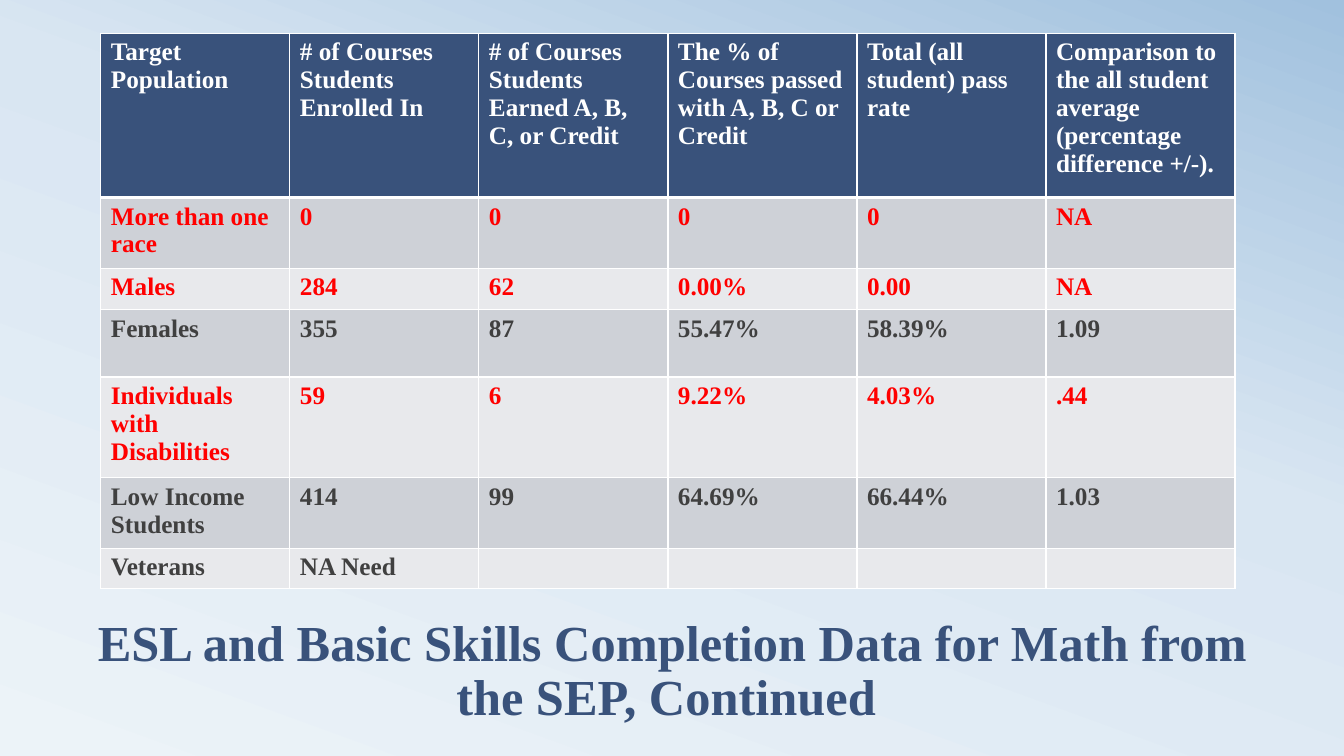
from copy import deepcopy

from lxml.etree import SubElement
from pptx import Presentation
from pptx.dml.color import RGBColor
from pptx.enum.text import MSO_ANCHOR, PP_ALIGN
from pptx.oxml.ns import qn
from pptx.util import Inches, Pt

COLORS = {
    "navy": "39527B", "white": "FFFFFF", "red": "FF0000", "gray": "404040",
    "band_dark": "CED1D7", "band_light": "E8E9EC",
    "sky_pale": "ECF3F8", "sky_mid": "D9E6F2", "sky_deep": "A1C1DE",
}

TITLE = "ESL and Basic Skills Completion Data for Math from the SEP, Continued "

# Row height, text colour, cell texts
ROWS = [
    (1.63, "white", ["Target Population", "# of Courses Students Enrolled In",
                     "# of Courses Students Earned A, B, C, or Credit",
                     "The % of Courses passed with A, B, C or Credit",
                     "Total (all student) pass rate",
                     "Comparison to the all student average "
                     "(percentage difference +/-)."]),
    (0.65, "red", ["More than one race", "0", "0", "0", "0", "NA"]),
    (0.41, "red", ["Males", "284", "62", "0.00%", "0.00", "NA"]),
    (0.67, "gray", ["Females", "355", "87", "55.47%", "58.39%", "1.09"]),
    (0.93, "red", ["Individuals with Disabilities", "59", "6", "9.22%", "4.03%", ".44"]),
    (0.65, "gray", ["Low Income Students", "414", "99", "64.69%", "66.44%", "1.03"]),
    (0.38, "gray", ["Veterans", "NA Need", "", "", "", ""]),
]


def rgb(name):
    return RGBColor.from_string(COLORS[name])


class SlideBuilder:
    font = "Times New Roman"

    def __init__(self, slide):
        self.s = slide

    def background(self, stops, angle):
        """Fill the slide with a linear gradient of (position, colour) stops."""
        fill = self.s.background.fill
        fill.gradient()
        fill.gradient_angle = angle
        gs_list = self.s.element.find(".//" + qn("a:gsLst"))
        while len(gs_list) < len(stops):
            gs_list.insert(1, deepcopy(gs_list[0]))
        for stop, (position, color) in zip(fill.gradient_stops, stops):
            stop.position = position
            stop.color.rgb = rgb(color)

    def style(self, p, size, color):
        for r in p.runs:
            r.font.name = self.font
            r.font.size = Pt(size)
            r.font.bold = True
            r.font.color.rgb = rgb(color)

    def title(self, text, x, y, w, h):
        sp = self.s.shapes.add_textbox(Inches(x), Inches(y), Inches(w), Inches(h))
        tf = sp.text_frame
        tf.word_wrap = True
        tf.vertical_anchor = MSO_ANCHOR.BOTTOM
        p = tf.paragraphs[0]
        p.text = text
        p.alignment = PP_ALIGN.CENTER
        p.line_spacing = 0.88
        self.style(p, 36, "navy")

    def borders(self, cell, **widths):
        tc_pr = cell._tc.get_or_add_tcPr()
        for side, width in widths.items():
            ln = SubElement(tc_pr, qn("a:ln" + side), w=str(Pt(width)))
            fill = SubElement(ln, qn("a:solidFill"))
            SubElement(fill, qn("a:srgbClr"), val=COLORS["white"])

    def table(self, rows, x, y, w):
        columns = len(rows[0][2])
        height = sum(row[0] for row in rows)
        table = self.s.shapes.add_table(len(rows), columns, Inches(x), Inches(y),
                                        Inches(w), Inches(height)).table
        for column in table.columns:
            column.width = Inches(w / columns)
        for i, (row_height, color, texts) in enumerate(rows):
            table.rows[i].height = Inches(row_height)
            band = "navy" if i == 0 else "band_dark" if i % 2 else "band_light"
            for j, text in enumerate(texts):
                cell = table.cell(i, j)
                cell.text_frame.text = text
                self.style(cell.text_frame.paragraphs[0], 18, color)
                self.borders(cell, L=1, R=1, T=3 if i == 1 else 1, B=3 if i == 0 else 1)
                cell.fill.solid()
                cell.fill.fore_color.rgb = rgb(band)


def main():
    prs = Presentation()
    prs.slide_width, prs.slide_height = Inches(13.33), Inches(7.5)
    builder = SlideBuilder(prs.slides.add_slide(prs.slide_layouts[6]))
    builder.background([(0, "sky_pale"), (0.58, "sky_mid"), (1, "sky_deep")], angle=70)
    builder.title(TITLE, 0.67, 6.17, 12, 1.08)
    builder.table(ROWS, 1, 0.33, 11.25)
    prs.save("out.pptx")


if __name__ == "__main__":
    main()
